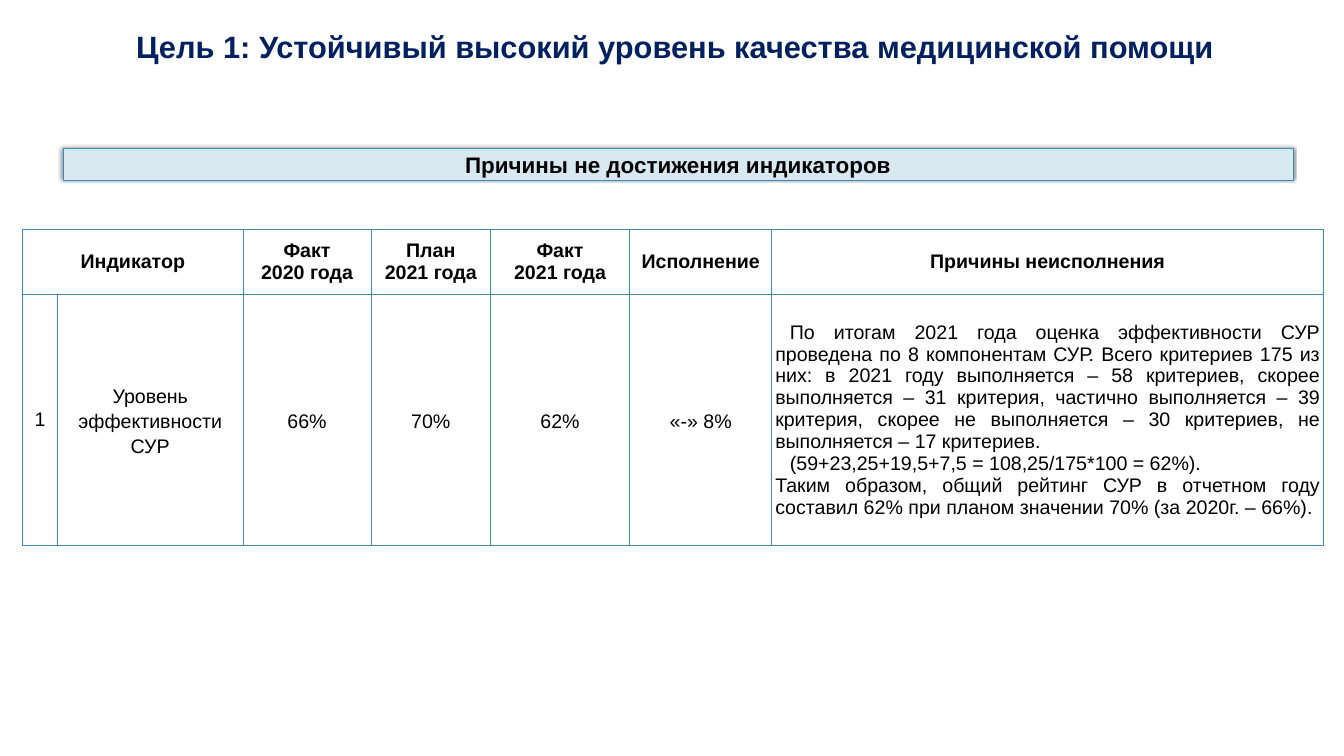
from pptx import Presentation, util as u
from pptx.dml.color import RGBColor
from pptx.enum import shapes, text
from pptx.oxml import parse_xml
from pptx.oxml.ns import nsdecls

SCALE = 9144
MID = text.PP_ALIGN.CENTER
LEFT = text.PP_ALIGN.LEFT
FULL = text.PP_ALIGN.JUSTIFY
COLS = [69, 368, 254, 237, 276, 282, 1094]
ROWS = [129, 498]
HEADS = ["Индикатор", "", "Факт\n2020 года", "План\n2021 года",
         "Факт\n2021 года", "Исполнение", "Причины неисполнения"]
FACTS = ["1", "Уровень эффективности СУР", "66%", "70%", "62%", "«-» 8%"]
CAUSES = (
    "По итогам 2021 года оценка эффективности СУР проведена по 8 компонентам СУР. "
    "Всего критериев 175 из них: в 2021 году выполняется – 58 критериев, скорее "
    "выполняется – 31 критерия, частично выполняется – 39 критерия, скорее не "
    "выполняется – 30 критериев, не выполняется – 17 критериев.\n"
    "(59+23,25+19,5+7,5 = 108,25/175*100 = 62%).\n"
    "Таким образом, общий рейтинг СУР в отчетном году составил 62% при планом "
    "значении 70% (за 2020г. – 66%).")


def px(n):
    """Turn px into EMU."""
    return u.Emu(n * SCALE)


def hue(code):
    """Turn a hex string into a colour."""
    return RGBColor.from_string(code)


def write(frame, words, size=28, color="000000", bold=False, align=MID,
          space=None, dents=()):
    """Fill a text frame, one paragraph a line."""
    frame.word_wrap = True
    for i, line in enumerate(words.split("\n")):
        para = frame.paragraphs[0] if i == 0 else frame.add_paragraph()
        para.alignment = align
        para.line_spacing = space
        if i < len(dents):
            para._p.get_or_add_pPr().set("indent", str(px(dents[i])))
        run = para.add_run()
        run.text = line
        run.font.name = "Arial"
        run.font.size = u.Pt(size)
        run.font.bold = bold
        run.font.color.rgb = hue(color)


def edge(cell, color="418AB3"):
    """Draw the four borders of a cell."""
    props = cell._tc.get_or_add_tcPr()
    for i, side in enumerate(("lnL", "lnR", "lnT", "lnB")):
        props.insert(i, parse_xml(
            f'<a:{side} {nsdecls("a")} w="12700"><a:solidFill>'
            f'<a:srgbClr val="{color}"/></a:solidFill></a:{side}>'))


def fill_cell(cell, words, side=7, **form):
    """Format and fill one table cell."""
    cell.fill.background()
    edge(cell)
    cell.vertical_anchor = text.MSO_ANCHOR.MIDDLE
    cell.margin_left = cell.margin_right = px(side)
    cell.margin_top = px(1 if side == 1 else 0)
    cell.margin_bottom = 0
    if words:
        write(cell.text_frame, words, **form)


def add_title(slide):
    """Place and format the slide title."""
    title = slide.shapes.title
    title.left, title.top, title.width, title.height = map(px, (260, 56, 2170, 70))
    frame = title.text_frame
    frame.auto_size = text.MSO_AUTO_SIZE.NONE
    frame.vertical_anchor = text.MSO_ANCHOR.MIDDLE
    write(frame, "Цель 1: Устойчивый высокий уровень качества медицинской помощи",
          size=44, color="002060", bold=True, align=LEFT)


def add_band(slide):
    """Add the shaded heading band above the table."""
    band = slide.shapes.add_shape(shapes.MSO_SHAPE.RECTANGLE,
                                  *map(px, (125, 294, 2440, 64)))
    band.fill.solid()
    band.fill.fore_color.rgb = hue("D8E8F1")
    band.line.color.rgb = hue("368DBE")
    band.line.width = u.Pt(0.75)
    band._element.spPr.append(parse_xml(
        f'<a:effectLst {nsdecls("a")}><a:outerShdw blurRad="{u.Pt(5)}" '
        f'dist="{u.Pt(2)}" dir="{245 * 60000}" rotWithShape="0">'
        '<a:srgbClr val="000000"><a:alpha val="50000"/></a:srgbClr>'
        '</a:outerShdw></a:effectLst>'))
    write(band.text_frame, "Причины не достижения индикаторов", size=32, bold=True)


def add_grid(slide):
    """Add the table of indicators."""
    grid = slide.shapes.add_table(
        len(ROWS), len(COLS), *map(px, (45, 455, sum(COLS), sum(ROWS)))).table
    grid.first_row = grid.horz_banding = False
    for col, wide in zip(grid.columns, COLS):
        col.width = px(wide)
    for row, high in zip(grid.rows, ROWS):
        row.height = px(high)
    grid.cell(0, 0).merge(grid.cell(0, 1))
    for i, head in enumerate(HEADS):
        fill_cell(grid.cell(0, i), head, side=1, bold=True)
    for i, fact in enumerate(FACTS):
        fill_cell(grid.cell(1, i), fact, side=7 if i else 1,
                  space=1.15 if i else None)
    fill_cell(grid.cell(1, len(FACTS)), CAUSES, align=FULL, dents=(29, 29))


def main():
    """Build and save the slide."""
    deck = Presentation()
    deck.slide_width, deck.slide_height = px(2666), px(1500)
    slide = deck.slides.add_slide(deck.slide_layouts[5])
    add_grid(slide)
    add_title(slide)
    add_band(slide)
    deck.save("out.pptx")


if __name__ == "__main__":
    main()
